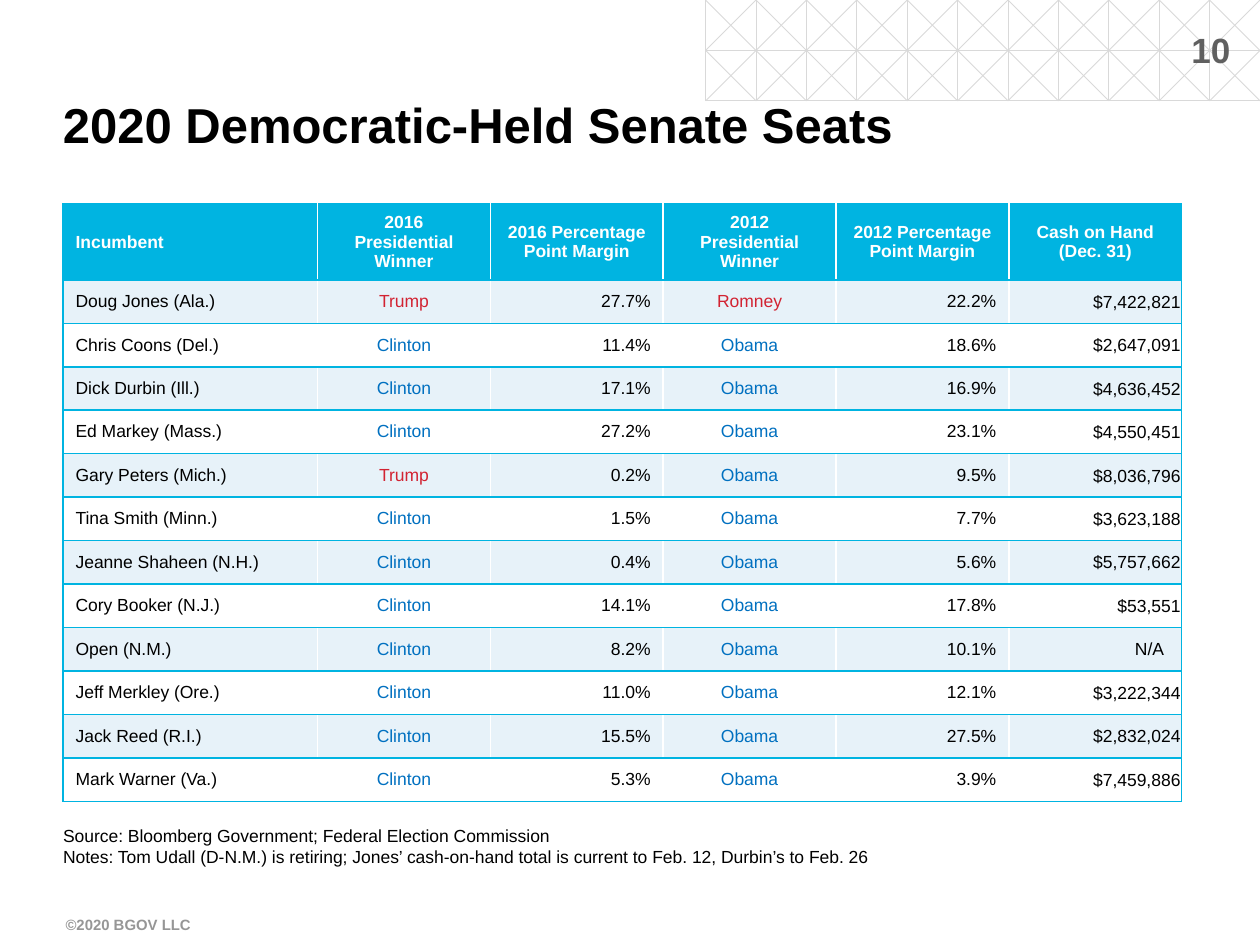
from lxml import etree
from pptx import Presentation
from pptx.dml.color import RGBColor
from pptx.enum.shapes import MSO_CONNECTOR as CONN
from pptx.enum.text import MSO_ANCHOR as ANCHOR, PP_ALIGN as ALIGN
from pptx.oxml.ns import qn
from pptx.util import Inches, Pt

COLORS = {
    "lattice": "D9D9D9", "page": "606060", "footer": "969696", "text": "000000",
    "accent": "00B4E1", "band": "E7F2F9", "white": "FFFFFF",
    "rep": "D22332", "dem": "0070C0",
}
FONT = "Arial"
GRID_COLS, GRID_ROWS = 100, 75  # square grid of the slide
UNIT = Inches(10) // GRID_COLS

HEADERS = ["Incumbent", "2016\vPresidential Winner", "2016 Percentage\vPoint Margin",
           "2012\vPresidential Winner", "2012 Percentage\vPoint Margin",
           "Cash on Hand\v(Dec. 31)"]
SEATS = [
    ("Doug Jones (Ala.)", "Trump", "27.7%", "Romney", "22.2%", "$7,422,821"),
    ("Chris Coons (Del.)", "Clinton", "11.4%", "Obama", "18.6%", "$2,647,091"),
    ("Dick Durbin (Ill.)", "Clinton", "17.1%", "Obama", "16.9%", "$4,636,452"),
    ("Ed Markey (Mass.)", "Clinton", "27.2%", "Obama", "23.1%", "$4,550,451"),
    ("Gary Peters (Mich.)", "Trump", "0.2%", "Obama", "9.5%", "$8,036,796"),
    ("Tina Smith (Minn.)", "Clinton", "1.5%", "Obama", "7.7%", "$3,623,188"),
    ("Jeanne Shaheen (N.H.)", "Clinton", "0.4%", "Obama", "5.6%", "$5,757,662"),
    ("Cory Booker (N.J.)", "Clinton", "14.1%", "Obama", "17.8%", "$53,551"),
    ("Open (N.M.)", "Clinton", "8.2%", "Obama", "10.1%", "N/A"),
    ("Jeff Merkley (Ore.)", "Clinton", "11.0%", "Obama", "12.1%", "$3,222,344"),
    ("Jack Reed (R.I.)", "Clinton", "15.5%", "Obama", "27.5%", "$2,832,024"),
    ("Mark Warner (Va.)", "Clinton", "5.3%", "Obama", "3.9%", "$7,459,886"),
]
REPUBLICANS = {"Trump", "Romney"}
ALIGNS = [ALIGN.LEFT, ALIGN.CENTER, ALIGN.RIGHT, ALIGN.CENTER, ALIGN.RIGHT, ALIGN.RIGHT]


def grid(n):
    return round(n * UNIT)


def rgb(name):
    return RGBColor.from_string(COLORS[name])


def style(p, color, size, bold=False, align=ALIGN.LEFT):
    p.alignment = align
    for key, value in {"name": FONT, "size": Pt(size), "bold": bold}.items():
        setattr(p.font, key, value)
    p.font.color.rgb = rgb(color)


def add_text(s, box, lines, pad=0, anchor=ANCHOR.TOP, **fmt):
    tf = s.shapes.add_textbox(*map(grid, box)).text_frame
    settings = {"word_wrap": True, "vertical_anchor": anchor,
                "margin_left": 0, "margin_right": 0,
                "margin_top": grid(pad), "margin_bottom": grid(pad)}
    for key, value in settings.items():
        setattr(tf, key, value)
    for i, line in enumerate(lines):
        p = tf.paragraphs[0] if i == 0 else tf.add_paragraph()
        p.text = line
        style(p, **fmt)


def add_lattice(s, box, step):
    """Two rows of square cells, crossed by diagonals."""
    left, top, width, height = box
    right, bottom, mid = left + width, top + height, top + step
    xs = [left + i * step for i in range(round(width / step) + 1)]
    lines = [(left, y, right, y) for y in (mid, bottom)]
    lines += [(x, top, x, bottom) for x in xs[:-1]]
    for a, b in zip(xs, xs[2:]):
        lines += [(a, top, b, bottom), (b, top, a, bottom)]
    # Half diagonals at both ends
    for edge, inner in ((left, xs[1]), (right, xs[-2])):
        lines += [(inner, top, edge, mid), (edge, mid, inner, bottom)]
    group = s.shapes.add_group_shape()
    for ends in lines:
        line = group.shapes.add_connector(CONN.STRAIGHT, *map(grid, ends))
        line.line.color.rgb = rgb("lattice")
        line.line.width = Pt(0.5)
        etree.SubElement(line._element.spPr, qn("a:effectLst"))


def set_borders(cell, sides):
    tc_pr = cell._tc.get_or_add_tcPr()
    for i, side in enumerate(sides):
        ln = etree.Element(qn(f"a:ln{side}"), w=str(Pt(1)))
        fill = etree.SubElement(ln, qn("a:solidFill"))
        etree.SubElement(fill, qn("a:srgbClr"), val=COLORS["accent"])
        tc_pr.insert(i, ln)  # borders precede the fill


def fill_cell(cell, text, fill, color, align, bold):
    cell.text = text
    cell.vertical_anchor = ANCHOR.MIDDLE
    cell.fill.solid()
    cell.fill.fore_color.rgb = rgb(fill)
    style(cell.text_frame.paragraphs[0], color, 10, bold, align)


def add_seat_table(s, box, name_width, header_height):
    width, height = box[2:]
    rows = [HEADERS, *SEATS]
    last = len(HEADERS) - 1
    table = s.shapes.add_table(len(rows), len(HEADERS), *map(grid, box)).table
    for c, col in enumerate(table.columns):
        col.width = grid((width - name_width) / last if c else name_width)
    for r, row in enumerate(table.rows):
        row.height = grid((height - header_height) / len(SEATS) if r else header_height)
    for r, values in enumerate(rows):
        for c, text in enumerate(values):
            cell = table.cell(r, c)
            if r == 0:
                align = ALIGN.CENTER if c else ALIGN.LEFT
                fill_cell(cell, text, "accent", "white", align, True)
            else:
                color = "text"
                if c in (1, 3):
                    color = "rep" if text in REPUBLICANS else "dem"
                fill_cell(cell, text, "band" if r % 2 else "white", color, ALIGNS[c], False)
                # Cash figures sit against the edge
                if c == last:
                    cell.margin_right = grid(0.1 if text.startswith("$") else 1.4)
                    cell.margin_top, cell.margin_bottom = grid(0.1), 0
            sides = (["L"] if c == 0 else []) + (["R"] if c == last else []) + ["T", "B"]
            set_borders(cell, sides)


def main():
    prs = Presentation()
    prs.slide_width, prs.slide_height = grid(GRID_COLS), grid(GRID_ROWS)
    s = prs.slides.add_slide(prs.slide_layouts[6])

    # Header pattern and page number
    add_lattice(s, (56, 0, 44, 8), 4)
    add_text(s, (93.5, 2, 5.2, 3.8), ["10"], anchor=ANCHOR.MIDDLE,
             color="page", size=20, bold=True, align=ALIGN.CENTER)
    # Title
    add_text(s, (5, 7.5, 90, 4.7), ["2020 Democratic-Held Senate Seats"],
             color="text", size=28, bold=True)
    # Table of seats
    add_seat_table(s, (5, 16.2, 88.8, 47.1), name_width=20.2, header_height=5.7)
    # Source, notes and footer
    add_text(s, (5, 65, 88.8, 5),
             ["Source: Bloomberg Government; Federal Election Commission",
              "Notes: Tom Udall (D-N.M.) is retiring; Jones’ cash-on-hand total is "
              "current to Feb. 12, Durbin’s to Feb. 26"],
             pad=0.5, color="text", size=10)
    add_text(s, (5.2, 72.2, 22.1, 2.8), ["©2020 BGOV LLC"], pad=0.5,
             color="footer", size=8.5, bold=True)
    prs.save("out.pptx")


if __name__ == "__main__":
    main()
